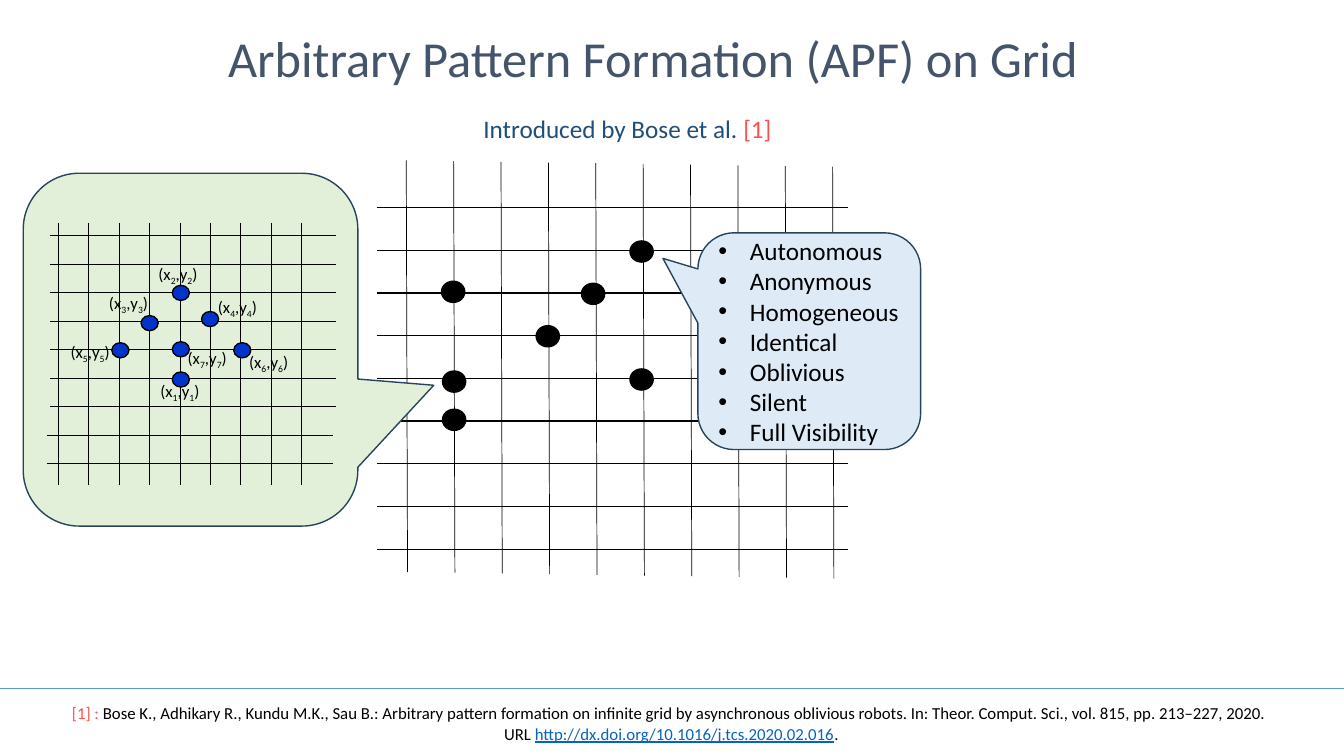
"""Build a slide on arbitrary pattern formation on a grid."""
from dataclasses import dataclass

from lxml import etree
from pptx import Presentation
from pptx.dml.color import RGBColor
from pptx.enum.shapes import MSO_CONNECTOR, MSO_SHAPE
from pptx.enum.text import MSO_ANCHOR, MSO_AUTO_SIZE, PP_ALIGN
from pptx.oxml.ns import qn
from pptx.util import Pt

STRAIGHT = MSO_CONNECTOR.STRAIGHT
OVAL = MSO_SHAPE.OVAL
CALLOUT = MSO_SHAPE.ROUNDED_RECTANGULAR_CALLOUT
MIDDLE = MSO_ANCHOR.MIDDLE
NO_AUTOFIT = MSO_AUTO_SIZE.NONE
CENTER = PP_ALIGN.CENTER
LEFT = PP_ALIGN.LEFT


@dataclass(frozen=True)
class Theme:
    font: str = "Calibri"
    title_size: int = 36
    body_size: int = 18
    small_size: int = 12
    title: str = "44546A"
    subtitle: str = "1F4E79"
    accent: str = "FF5050"
    link: str = "0563C1"
    ink: str = "000000"
    rule: str = "5B9BD5"
    outline: str = "28445D"
    property_fill: str = "DEEBF7"
    pattern_fill: str = "E2F0D9"
    target: str = "0033CC"


class SlideBuilder:
    def __init__(self, presentation, theme):
        self.theme = theme
        self.slide = presentation.slides.add_slide(presentation.slide_layouts[5])
        self.shapes = self.slide.shapes

    def start_group(self):
        self.shapes = self.slide.shapes.add_group_shape().shapes

    def write_runs(self, paragraph, runs, size):
        for text, color, *styles in runs:
            run = paragraph.add_run()
            run.text = text
            run.font.name = self.theme.font
            run.font.size = Pt(size)
            run.font.color.rgb = RGBColor.from_string(color)
            if "underline" in styles:
                run.font.underline = True
            if "subscript" in styles:
                run._r.get_or_add_rPr().set("baseline", "-25000")

    def fill_frame(self, frame, paragraphs, size, alignment=CENTER, bullet_indent=0):
        frame.word_wrap = True
        frame.auto_size = NO_AUTOFIT
        frame.vertical_anchor = MIDDLE
        for index, runs in enumerate(paragraphs):
            paragraph = frame.add_paragraph() if index else frame.paragraphs[0]
            paragraph.alignment = alignment
            if bullet_indent:
                properties = paragraph._p.get_or_add_pPr()
                properties.set("marL", str(Pt(bullet_indent)))
                properties.set("indent", str(-Pt(bullet_indent)))
                etree.SubElement(properties, qn("a:buFont"), typeface="Arial")
                etree.SubElement(properties, qn("a:buChar"), char="•")
            self.write_runs(paragraph, runs, size)

    def title(self, text, left, top, width, height):
        shape = self.slide.shapes.title
        shape.left, shape.top = Pt(left), Pt(top)
        shape.width, shape.height = Pt(width), Pt(height)
        self.fill_frame(shape.text_frame, [[(text, self.theme.title)]], self.theme.title_size)

    def text(self, paragraphs, left, top, width, height, size):
        shape = self.shapes.add_textbox(Pt(left), Pt(top), Pt(width), Pt(height))
        self.fill_frame(shape.text_frame, paragraphs, size)

    def line(self, start, end, weight, color):
        connector = self.shapes.add_connector(STRAIGHT, *map(Pt, start + end))
        connector.line.color.rgb = RGBColor.from_string(color)
        connector.line.width = Pt(weight)
        etree.SubElement(connector._element.spPr, qn("a:effectLst"))

    def shape(self, kind, left, top, width, height, fill, outline):
        shape = self.shapes.add_shape(kind, Pt(left), Pt(top), Pt(width), Pt(height))
        shape.shadow.inherit = False
        shape.fill.solid()
        shape.fill.fore_color.rgb = RGBColor.from_string(fill)
        shape.line.color.rgb = RGBColor.from_string(outline)
        shape.line.width = Pt(1)
        return shape

    def callout(self, left, top, width, height, fill, tip):
        shape = self.shape(CALLOUT, left, top, width, height, fill, self.theme.outline)
        for index, value in enumerate((*tip, 0.167)):
            shape.adjustments[index] = value
        return shape

    def dots(self, positions, width, height, fill):
        for left, top in positions:
            self.shape(OVAL, left, top, width, height, fill, self.theme.ink)

    def coordinate(self, index, left, top):
        ink = self.theme.ink
        subscript = (str(index), ink, "subscript")
        runs = [("(x", ink), subscript, (",y", ink), subscript, (")", ink)]
        self.text([runs], left, top, 61.2, 17.3, self.theme.small_size)


def draw_headings(builder):
    theme = builder.theme
    builder.title("Arbitrary Pattern Formation (APF) on Grid", 76.3, 18.7, 780.5, 44.6)
    builder.text([[("Introduced by Bose et al. ", theme.subtitle), ("[1]", theme.accent)]],
                 330.5, 69.1, 235.4, 44.6, theme.body_size)
    builder.line((0, 491.8), (960, 491.8), 0.5, theme.rule)
    citation = [("[1] : ", theme.accent),
                ("Bose K., Adhikary R., Kundu M.K., Sau B.: Arbitrary pattern formation on "
                 "infinite grid by asynchronous oblivious robots. In: Theor. Comput. Sci., "
                 "vol. 815, pp. 213–227, 2020. ", theme.ink)]
    address = [("URL ", theme.ink),
               ("http://dx.doi.org/10.1016/j.tcs.2020.02.016", theme.link, "underline"),
               (".", theme.ink)]
    builder.text([citation, address], 15.1, 500.4, 928.8, 32.4, theme.small_size)


def draw_robot_grid(builder):
    theme = builder.theme
    for row in range(9):
        y = 148.3 + 30.5 * row
        builder.line((269.3, y), (605.5, y), 1, theme.ink)
    for column in range(10):
        x, top = 290.2 + 33.84 * column, 114.6 + 0.5 * column
        builder.line((x, top), (x + 0.9, top + 294), 0.5, theme.ink)
    robots = [(315.4, 200.9), (450, 172.1), (383, 232.6), (415.4, 202.3),
              (450, 263.5), (316.1, 265), (316.1, 292.3)]
    builder.dots(robots, 16.6, 15.1, theme.ink)
    properties = ["Autonomous", "Anonymous", "Homogeneous", "Identical",
                  "Oblivious", "Silent", "Full Visibility"]
    callout = builder.callout(498.5, 166.3, 159.1, 154.8, theme.property_fill, (-0.657, -0.382))
    builder.fill_frame(callout.text_frame, [[(name, theme.ink)] for name in properties],
                       theme.body_size, LEFT, 22.5)


def draw_target_pattern(builder):
    theme = builder.theme
    builder.start_group()
    builder.callout(16.6, 123.8, 239, 252, theme.pattern_fill, (0.727, 0.101))
    for column in range(9):
        x = 41.8 + 21.69 * column
        builder.line((x, 159.1), (x, 346.3), 0.5 if column else 1, theme.ink)
    for row in range(9):
        y = 168.5 + 20.34 * row
        left = 36 if row < 7 else 33.8
        builder.line((left, y), (left + 204.2, y), 0.75 if row < 8 else 1, theme.ink)
    targets = [(123.1, 203.8), (144, 222.5), (100.8, 225.4), (79.9, 244.8),
               (167, 244.8), (123.1, 244.1), (123.1, 265.7)]
    builder.dots(targets, 12.2, 10.8, theme.target)
    labels = [(97.9, 271.4), (96.5, 187.9), (61.2, 208.8), (139, 211.7),
              (33.8, 243.4), (161.3, 250.6), (117.4, 247.7)]
    for index, position in enumerate(labels, 1):
        builder.coordinate(index, *position)


def main():
    presentation = Presentation()
    presentation.slide_width, presentation.slide_height = Pt(960), Pt(540)
    builder = SlideBuilder(presentation, Theme())
    draw_headings(builder)
    draw_robot_grid(builder)
    draw_target_pattern(builder)
    presentation.save("out.pptx")


if __name__ == "__main__":
    main()
